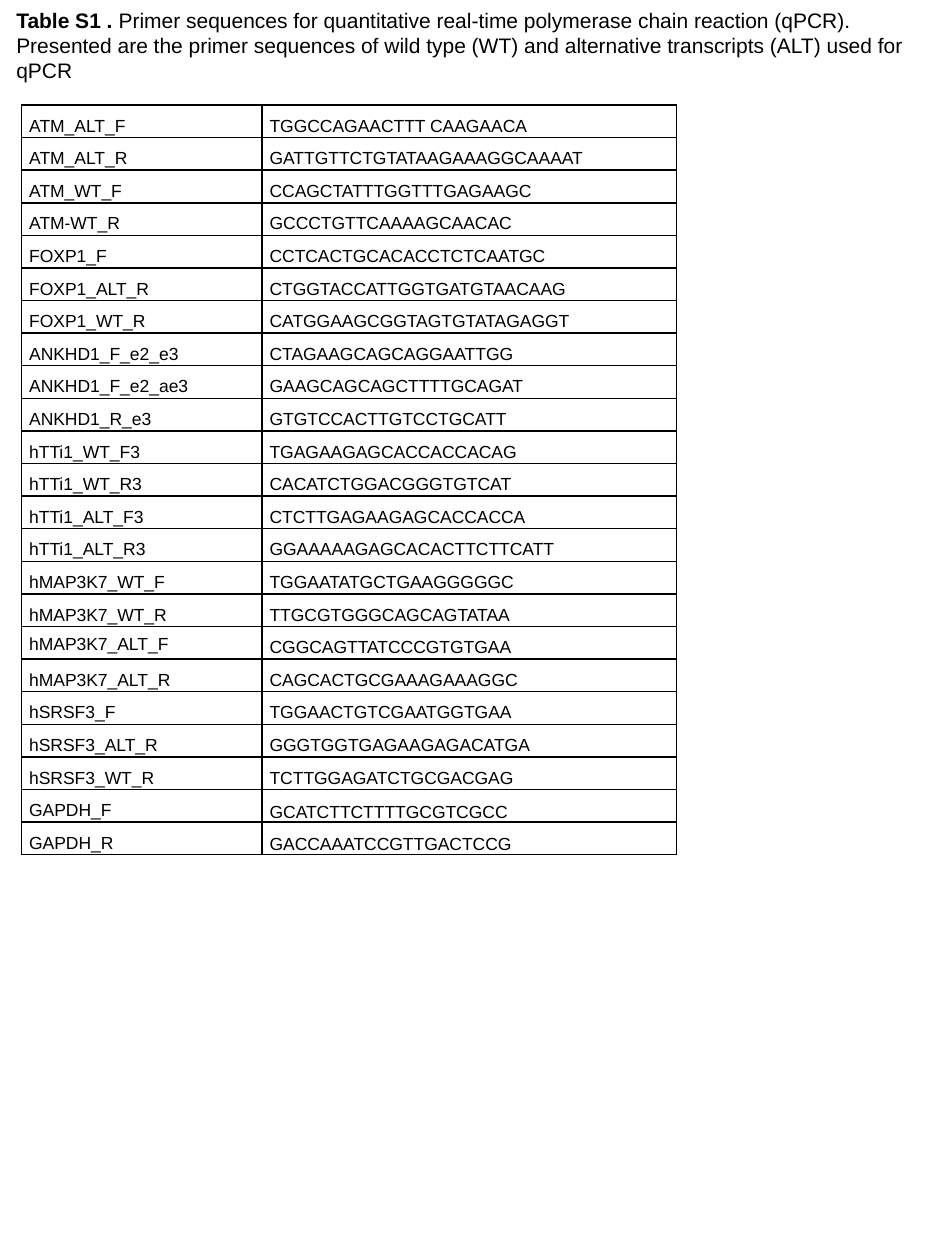
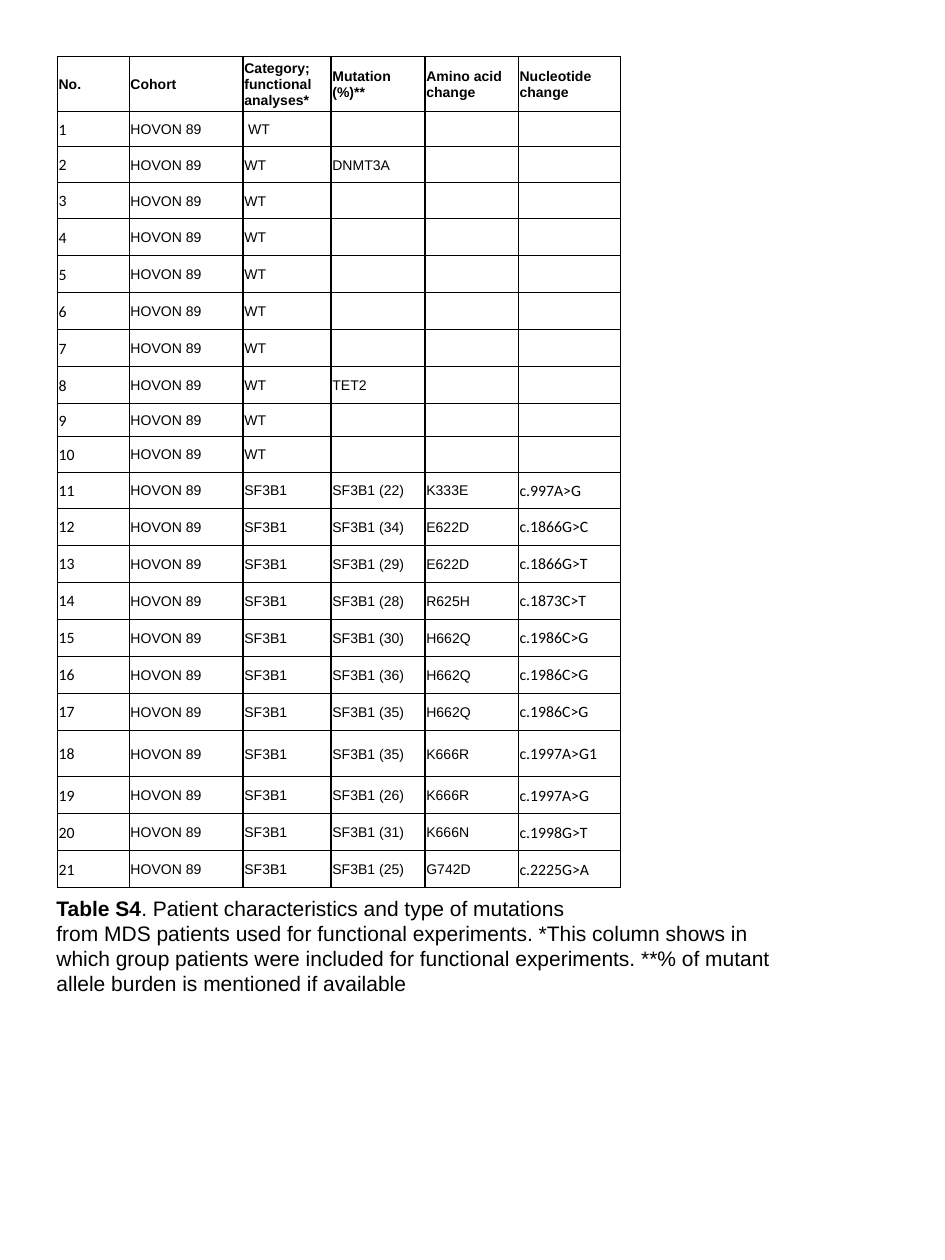
from dataclasses import dataclass

from lxml import etree
from pptx import Presentation
from pptx.dml.color import RGBColor
from pptx.enum.text import MSO_ANCHOR, MSO_AUTO_SIZE
from pptx.oxml.ns import qn
from pptx.util import Pt

MIDDLE, BOTTOM, TOP = MSO_ANCHOR.MIDDLE, MSO_ANCHOR.BOTTOM, MSO_ANCHOR.TOP
GROW = MSO_AUTO_SIZE.SHAPE_TO_FIT_TEXT


@dataclass(frozen=True)
class Theme:
    ink: str = "000000"
    body_font: str = "Arial"
    code_font: str = "Calibri"
    caption_size: float = 12
    primer_size: float = 10
    patient_size: float = 8
    code_size: float = 9
    border: float = 1


THEME = Theme()

# Content of the primer table
PRIMERS = [
    ("ATM_ALT_F", "TGGCCAGAACTTT CAAGAACA"),
    ("ATM_ALT_R", "GATTGTTCTGTATAAGAAAGGCAAAAT"),
    ("ATM_WT_F", "CCAGCTATTTGGTTTGAGAAGC"),
    ("ATM-WT_R", "GCCCTGTTCAAAAGCAACAC"),
    ("FOXP1_F", "CCTCACTGCACACCTCTCAATGC"),
    ("FOXP1_ALT_R", "CTGGTACCATTGGTGATGTAACAAG"),
    ("FOXP1_WT_R", "CATGGAAGCGGTAGTGTATAGAGGT"),
    ("ANKHD1_F_e2_e3", "CTAGAAGCAGCAGGAATTGG"),
    ("ANKHD1_F_e2_ae3", "GAAGCAGCAGCTTTTGCAGAT"),
    ("ANKHD1_R_e3", "GTGTCCACTTGTCCTGCATT"),
    ("hTTi1_WT_F3", "TGAGAAGAGCACCACCACAG"),
    ("hTTi1_WT_R3", "CACATCTGGACGGGTGTCAT"),
    ("hTTi1_ALT_F3", "CTCTTGAGAAGAGCACCACCA"),
    ("hTTi1_ALT_R3", "GGAAAAAGAGCACACTTCTTCATT"),
    ("hMAP3K7_WT_F", "TGGAATATGCTGAAGGGGGC"),
    ("hMAP3K7_WT_R", "TTGCGTGGGCAGCAGTATAA"),
    ("hMAP3K7_ALT_F", "CGGCAGTTATCCCGTGTGAA"),
    ("hMAP3K7_ALT_R", "CAGCACTGCGAAAGAAAGGC"),
    ("hSRSF3_F", "TGGAACTGTCGAATGGTGAA"),
    ("hSRSF3_ALT_R", "GGGTGGTGAGAAGAGACATGA"),
    ("hSRSF3_WT_R", "TCTTGGAGATCTGCGACGAG"),
    ("GAPDH_F", "GCATCTTCTTTTGCGTCGCC"),
    ("GAPDH_R", "GACCAAATCCGTTGACTCCG"),
]

# Content of the patient table
PATIENT_HEADER = ["No.", "Cohort", "Category; functional analyses*",
                  "Mutation (%)**", "Amino acid change", "Nucleotide change"]
COHORT = "HOVON 89"
WILD_TYPE_COUNT = 10
WILD_TYPE_MUTATIONS = {2: "DNMT3A", 8: "TET2"}
SF3B1_PATIENTS = [
    (22, "K333E", "c.997A>G"),
    (34, "E622D", "c.1866G>C"),
    (29, "E622D", "c.1866G>T"),
    (28, "R625H", "c.1873C>T"),
    (30, "H662Q", "c.1986C>G"),
    (36, "H662Q", "c.1986C>G"),
    (35, "H662Q", "c.1986C>G"),
    (35, "K666R", "c.1997A>G1"),
    (26, "K666R", "c.1997A>G"),
    (31, "K666N", "c.1998G>T"),
    (25, "G742D", "c.2225G>A"),
]


def add_run(paragraph, text, size, bold=False, font=THEME.body_font):
    run = paragraph.add_run()
    run.text = text
    run.font.size = Pt(size)
    run.font.name = font
    run.font.bold = bold
    run.font.color.rgb = RGBColor.from_string(THEME.ink)


def add_caption(slide, box, paragraphs, anchor=TOP):
    """Caption whose paragraphs are lists of (text, bold) runs."""
    caption = slide.shapes.add_textbox(*map(Pt, box)).text_frame
    caption.word_wrap = True
    caption.auto_size = GROW
    caption.vertical_anchor = anchor
    for index, runs in enumerate(paragraphs):
        paragraph = caption.add_paragraph() if index else caption.paragraphs[0]
        for text, bold in runs:
            add_run(paragraph, text, THEME.caption_size, bold)


def add_borders(cell):
    properties = cell._tc.get_or_add_tcPr()
    for position, side in enumerate(("a:lnL", "a:lnR", "a:lnT", "a:lnB")):
        line = etree.Element(qn(side), w=str(Pt(THEME.border)))
        fill = etree.SubElement(line, qn("a:solidFill"))
        etree.SubElement(fill, qn("a:srgbClr"), val=THEME.ink)
        properties.insert(position, line)


def add_grid(slide, left, top, widths, heights):
    """Plain ruled table without style banding."""
    frame = slide.shapes.add_table(len(heights), len(widths), Pt(left), Pt(top),
                                   Pt(sum(widths)), Pt(sum(heights)))
    grid = frame.table
    grid.first_row = grid.horz_banding = False
    for column, width in zip(grid.columns, widths):
        column.width = Pt(width)
    for row, height in zip(grid.rows, heights):
        row.height = Pt(height)
    return grid


def fill_cell(cell, text, insets, size, bold=False, font=THEME.body_font):
    cell.fill.background()
    add_borders(cell)
    cell.vertical_anchor = MIDDLE
    (cell.margin_left, cell.margin_top,
     cell.margin_right, cell.margin_bottom) = map(Pt, insets)
    paragraph = cell.text_frame.paragraphs[0]
    if text:
        add_run(paragraph, text, size, bold, font)
    else:
        # Keeps an empty cell from stretching its row
        etree.SubElement(paragraph._p, qn("a:endParaRPr"), sz=str(size * 100))
    return paragraph


def add_primer_table(slide, left, top):
    grid = add_grid(slide, left, top, [137.4, 236.9], [18.63] * len(PRIMERS))
    for row, primer in enumerate(PRIMERS):
        for column, text in enumerate(primer):
            cell = grid.cell(row, column)
            paragraph = fill_cell(cell, text, (4.3, 0, 4.3, 0), THEME.primer_size)
            paragraph.line_spacing = 1.15 if text == "hMAP3K7_ALT_F" else 1.5
            if primer[0].startswith("GAPDH"):
                paragraph.space_after = Pt(10)
                cell.vertical_anchor = BOTTOM if column else MIDDLE


def patient_rows():
    for number in range(1, WILD_TYPE_COUNT + 1):
        category = " WT" if number == 1 else "WT"
        yield (str(number), COHORT, category,
               WILD_TYPE_MUTATIONS.get(number, ""), "", "")
    for number, (burden, amino_acid, nucleotide) in enumerate(
            SF3B1_PATIENTS, WILD_TYPE_COUNT + 1):
        yield (str(number), COHORT, "SF3B1", f"SF3B1 ({burden})",
               amino_acid, nucleotide)


def add_patient_table(slide, left, top):
    widths = [41.1, 65.1, 50.3, 53.7, 53.3, 58.3]
    heights = ([31.5, 20.1] + [20.6] * 2 + [21.15] * 5 + [18.7] + [20.6] * 2
               + [21.15] * 6 + [26.4] + [21.15] * 3)
    grid = add_grid(slide, left, top, widths, heights)
    code_columns = (0, len(widths) - 1)
    for row, values in enumerate([PATIENT_HEADER, *patient_rows()]):
        for column, text in enumerate(values):
            is_code = row > 0 and column in code_columns
            fill_cell(grid.cell(row, column), text, (0.7, 0.7, 0.7, 0),
                      THEME.code_size if is_code else THEME.patient_size,
                      bold=row == 0,
                      font=THEME.code_font if is_code else THEME.body_font)


def build_primer_slide(slide):
    add_caption(slide, (2.2, 0.7, 526.3, 51), [[
        ("Table S1 . ", True),
        ("Primer sequences for quantitative real-time polymerase chain reaction "
         "(qPCR). Presented are the primer sequences of wild type (WT) and "
         "alternative transcripts (ALT) used for qPCR", False)]])
    add_primer_table(slide, 12.4, 60)


def build_patient_slide(slide):
    add_caption(slide, (25.2, 507.6, 437, 65.5), [
        [("Table S4", True),
         (". Patient characteristics and type of mutations", False)],
        [("from MDS patients used for functional experiments. *This column shows "
          "in which group patients were included for functional experiments. "
          "**% of mutant allele burden is mentioned if available", False)]],
        MIDDLE)
    add_patient_table(slide, 32.8, 32.2)


def main():
    deck = Presentation()
    deck.slide_width, deck.slide_height = Pt(540), Pt(720)
    blank = deck.slide_layouts[6]
    for build in (build_primer_slide, build_patient_slide):
        build(deck.slides.add_slide(blank))
    deck.save("out.pptx")


if __name__ == "__main__":
    main()
